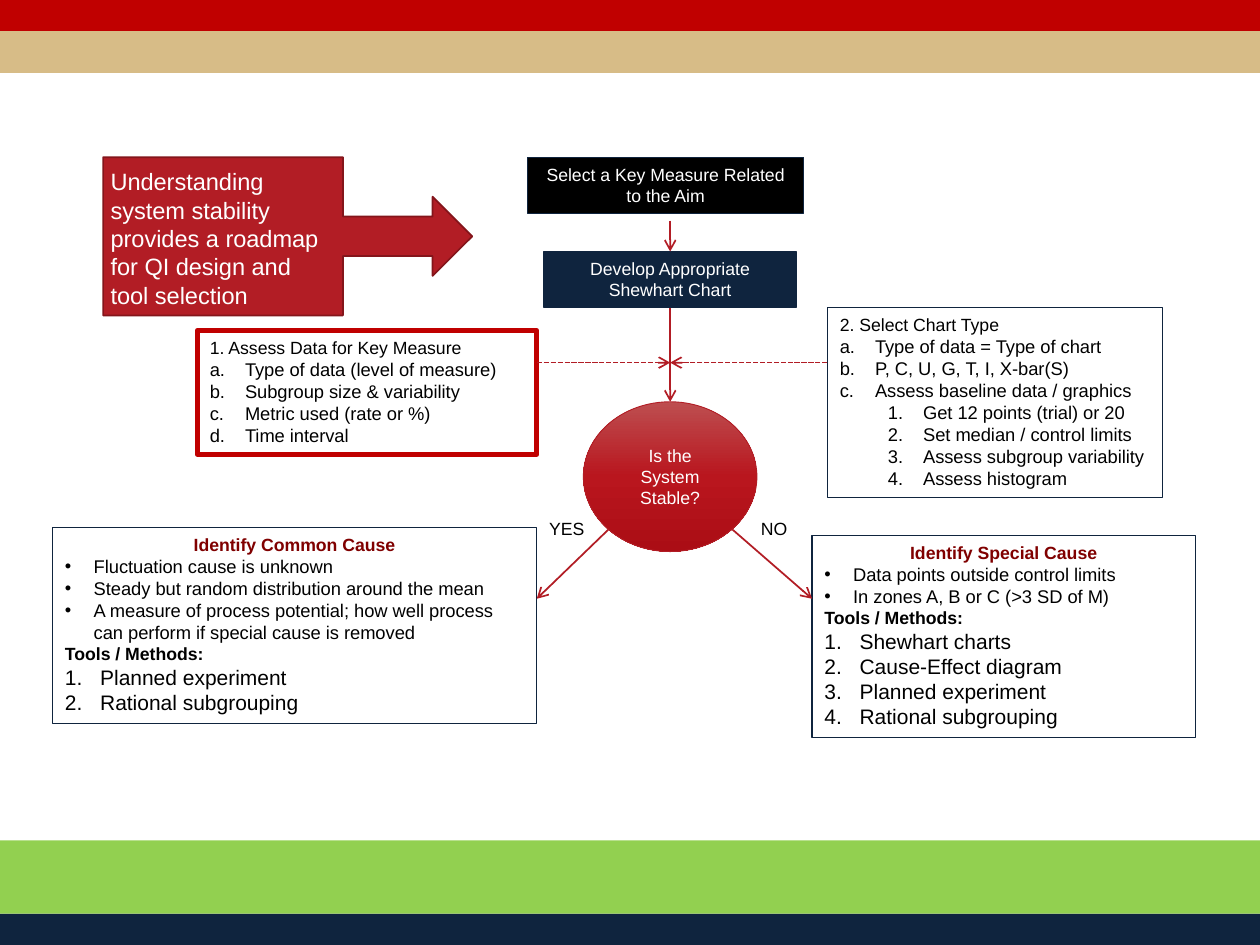
from lxml.etree import SubElement
from copy import deepcopy
from pptx import Presentation
from pptx.dml.color import RGBColor
from pptx.enum.dml import MSO_LINE
from pptx.enum.shapes import MSO_CONNECTOR, MSO_SHAPE
from pptx.enum.text import MSO_ANCHOR, PP_ALIGN
from pptx.oxml.ns import qn
from pptx.util import Cm, Pt

NAVY, RED, CRIMSON = "0F243E", "C00000", "B21D25"
BLACK, WHITE, MAROON = "000000", "FFFFFF", "800000"

# Paragraph styles: size, bold, colour, alignment, list (marker, text indent, hang, level)
LEFT, CENTER = PP_ALIGN.LEFT, PP_ALIGN.CENTER
STYLES = {
    "plain": (10.1, False, BLACK, LEFT, None),
    "box": (10.1, False, WHITE, CENTER, None),
    "callout": (13.5, False, WHITE, LEFT, None),
    "heading": (10.1, True, MAROON, CENTER, None),
    "strong": (10.1, True, BLACK, LEFT, None),
    "letter": (10.5, False, BLACK, LEFT, ("alphaLcPeriod", 0.71, 0.71, 0)),
    "step": (10.5, False, BLACK, LEFT, ("arabicPeriod", 1.68, 0.71, 1)),
    "bullet": (10.5, False, BLACK, LEFT, ("•", 0.58, 0.58, 0)),
    "tool": (12, False, BLACK, LEFT, ("arabicPeriod", 0.71, 0.71, 0)),
}

KEY_DATA = [
    ("plain", "1. Assess Data for Key Measure"),
    ("letter", "Type of data (level of measure)"),
    ("letter", "Subgroup size & variability"),
    ("letter", "Metric used (rate or %)"),
    ("letter", "Time interval"),
]
CHART_TYPE = [
    ("plain", "2. Select Chart Type"),
    ("letter", "Type of data = Type of chart"),
    ("letter", "P, C, U, G, T, I, X-bar(S)"),
    ("letter", "Assess baseline data / graphics"),
    ("step", "Get 12 points (trial) or 20"),
    ("step", "Set median / control limits"),
    ("step", "Assess subgroup variability"),
    ("step", "Assess histogram"),
]
COMMON_CAUSE = [
    ("heading", "Identify Common Cause"),
    ("bullet", "Fluctuation cause is unknown"),
    ("bullet", "Steady but random distribution around the mean"),
    ("bullet", "A measure of process potential; how well process can perform "
               "if special cause is removed"),
    ("strong", "Tools / Methods:"),
    ("tool", "Planned experiment"),
    ("tool", "Rational subgrouping"),
]
SPECIAL_CAUSE = [
    ("heading", "Identify Special Cause"),
    ("bullet", "Data points outside control limits"),
    ("bullet", "In zones A, B or C (>3 SD of M)"),
    ("strong", "Tools / Methods:"),
    ("tool", "Shewhart charts"),
    ("tool", "Cause-Effect diagram"),
    ("tool", "Planned experiment"),
    ("tool", "Rational subgrouping"),
]


def color(value):
    return RGBColor.from_string(value)


def set_list(p, marker, indent, hang, level):
    p.level = level
    pPr = p._p.get_or_add_pPr()
    pPr.set("marL", str(Cm(indent)))
    pPr.set("indent", str(-Cm(hang)))
    if marker == "•":
        SubElement(pPr, qn("a:buFont"), typeface="Arial")
        SubElement(pPr, qn("a:buChar"), char=marker)
    else:
        SubElement(pPr, qn("a:buFont"), typeface="+mj-lt")
        SubElement(pPr, qn("a:buAutoNum"), type=marker)


def write(sp, lines, anchor=MSO_ANCHOR.TOP):
    tf = sp.text_frame
    tf.word_wrap = True
    tf.vertical_anchor = anchor
    for i, (style, text) in enumerate(lines):
        size, bold, ink, align, marker = STYLES[style]
        p = tf.add_paragraph() if i else tf.paragraphs[0]
        p.alignment = align
        if marker:
            set_list(p, *marker)
        r = p.add_run()
        r.text = text
        r.font.name = "Arial"
        r.font.size = Pt(size)
        r.font.bold = bold
        r.font.color.rgb = color(ink)


def add_box(s, at, fill=None, line=None, width=0.75, kind=MSO_SHAPE.RECTANGLE):
    sp = s.shapes.add_shape(kind, *map(Cm, at))
    sp.shadow.inherit = False
    if fill:
        sp.fill.solid()
        sp.fill.fore_color.rgb = color(fill)
    else:
        sp.fill.background()
    if line:
        sp.line.color.rgb = color(line)
        sp.line.width = Pt(width)
    else:
        sp.line.fill.background()
    return sp


def add_label(s, at, style, text):
    write(s.shapes.add_textbox(*map(Cm, at)), [(style, text)])


def add_arrow(s, start, end, dashed=False):
    cn = s.shapes.add_connector(MSO_CONNECTOR.STRAIGHT, *map(Cm, start + end))
    cn.line.color.rgb = color(CRIMSON)
    cn.line.width = Pt(1)
    if dashed:
        cn.line.dash_style = MSO_LINE.SQUARE_DOT
    SubElement(cn.line._get_or_add_ln(), qn("a:tailEnd"), type="arrow")
    SubElement(cn._element.spPr, qn("a:effectLst"))
    return cn


def fill_gradient(sp, stops):
    sp.fill.gradient()
    sp.fill.gradient_angle = 270
    gs_list = sp._element.spPr.find(qn("a:gradFill")).find(qn("a:gsLst"))
    while len(gs_list) < len(stops):
        gs_list.append(deepcopy(gs_list[-1]))
    for stop, (position, value) in zip(sp.fill.gradient_stops, stops):
        stop.position = position
        stop.color.rgb = color(value)


def main():
    prs = Presentation()
    prs.slide_width, prs.slide_height = Cm(25.4), Cm(19.05)
    s = prs.slides.add_slide(prs.slide_layouts[6])

    # Bands at top and bottom
    for top, height, fill in [(18.42, 0.63, NAVY), (16.94, 1.48, "92D050"),
                              (0, 0.63, RED), (0.63, 0.84, "D7BC87")]:
        add_box(s, (0, top, 25.4, height), fill)

    # Branch labels
    add_label(s, (10.82, 10.31, 1.42, 0.69), "plain", "YES")
    add_label(s, (15.09, 10.31, 1.12, 0.69), "plain", "NO")

    # First two steps
    measure = add_box(s, (10.64, 3.17, 5.56, 1.13), BLACK, NAVY)
    write(measure, [("box", "Select a Key Measure Related to the Aim")])
    chart = add_box(s, (10.97, 5.07, 5.08, 1.13), NAVY, NAVY)
    write(chart, [("box", "Develop Appropriate Shewhart Chart")])

    # Detail boxes
    for at, line, width, lines in [
        ((16.68, 6.2, 6.75, 3.83), NAVY, 0.75, CHART_TYPE),
        ((3.98, 6.66, 6.84, 2.5), RED, 3, KEY_DATA),
        ((1.06, 10.64, 9.76, 3.94), NAVY, 0.75, COMMON_CAUSE),
        ((16.37, 10.8, 7.73, 4.07), NAVY, 0.75, SPECIAL_CAUSE),
    ]:
        write(add_box(s, at, None, line, width), lines)

    # Decision
    stable = add_box(s, (11.76, 8.1, 3.5, 3.02), None, CRIMSON, 0.5, MSO_SHAPE.OVAL)
    fill_gradient(stable, [(0, "BD4E50"), (0.5, "B9161E"), (1, "AB0D15")])
    write(stable, [("box", "Is the System Stable?")], MSO_ANCHOR.MIDDLE)

    # Arrows
    axis, join = 13.51, 7.31
    down = add_arrow(s, (axis, 6.2), (axis, 8.1))
    down.begin_connect(chart, 2)
    down.end_connect(stable, 0)
    add_arrow(s, (axis, 4.45), (axis, 5.07)).end_connect(chart, 0)
    add_arrow(s, (14.76, 10.67), (16.37, 12.07))
    add_arrow(s, (12.27, 10.67), (10.82, 12.07))
    for side in (10.82, 16.68):
        add_arrow(s, (side, join), (axis, join), dashed=True)

    # Callout
    add_box(s, (2.08, 3.17, 7.44, 3.19), CRIMSON, "84151B", 1,
            MSO_SHAPE.RIGHT_ARROW_CALLOUT)
    add_label(s, (1.98, 3.25, 4.93, 3.15), "callout",
              "Understanding system stability provides a roadmap for QI design "
              "and tool selection")

    prs.save("out.pptx")


if __name__ == "__main__":
    main()
